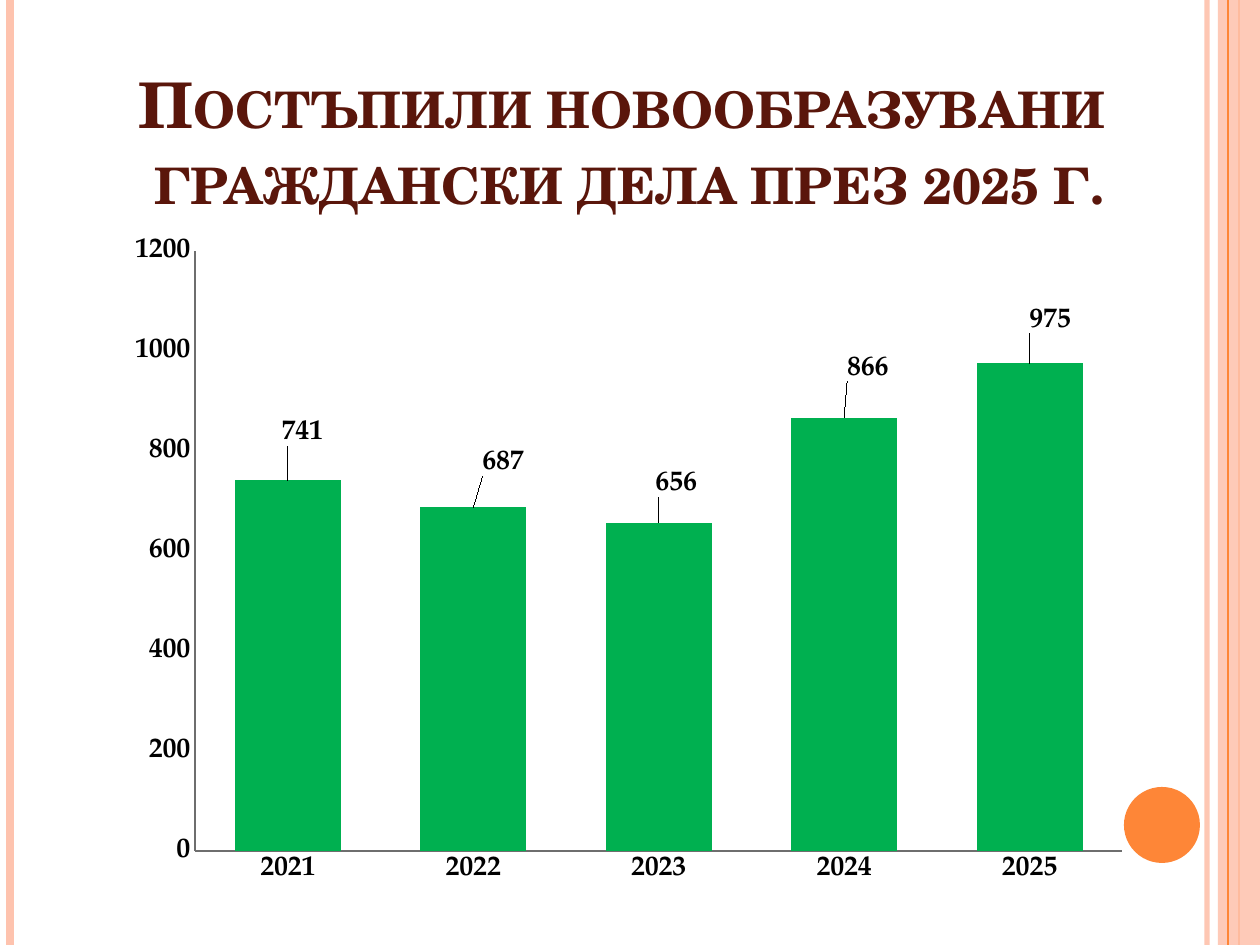
from lxml import etree
from pptx import Presentation
from pptx import util as u
from pptx.chart.data import CategoryChartData
from pptx.dml.color import RGBColor
from pptx.enum import chart as ch, shapes, text
from pptx.oxml import parse_xml
from pptx.oxml.ns import nsdecls, qn

PX = 914400 // 126
HEADING = "Постъпили новообразувани \vграждански дела през 2025 г."
# year, cases, label shift from its usual place (px)
CASES = [
    ("2021", 741, (14, -29)),
    ("2022", 687, (30, -26)),
    ("2023", 656, (17, -21)),
    ("2024", 866, (24, -31)),
    ("2025", 975, (21, -25)),
]
# x (px), colour, width (pt), opacity (%)
STRIPES = [
    (1207, "FEC3AE", 3, 93),
    (10, "FEC3AE", 4.5, 100),
    (1239, "FE8637", 1.5, 100),
    (1228, "FE8637", 0.75, 100),
]
BAND = (1218, 0, 42, 945)
DOT = (1124, 787, 76, 76)
TITLE_BOX = (84, 66, 1091, 157)
CHART_BOX = (115, 224, 1029, 672)
PLOT_BOX = (80, 27, 927, 600)  # inside the chart


def emu(*lengths):
    return [n * PX for n in lengths]


def rgb(hex_code):
    return RGBColor.from_string(hex_code)


def set_opacity(fill_parent, percent):
    colour = fill_parent.find(".//" + qn("a:srgbClr"))
    etree.SubElement(colour, qn("a:alpha")).set("val", str(percent * 1000))


def style_font(font, size, face, colour="000000"):
    font.size, font.name, font.bold = u.Pt(size), face, True
    font.color.rgb = rgb(colour)


def manual_layout(target="", **fractions):
    values = "".join(f'<c:{k} val="{v:.3f}"/>' for k, v in fractions.items())
    return parse_xml(f'<c:layout {nsdecls("c")}><c:manualLayout>{target}{values}'
                     "</c:manualLayout></c:layout>")


def add_stripe(slide, x, colour, width, opacity):
    stripe = slide.shapes.add_connector(
        shapes.MSO_CONNECTOR.STRAIGHT, *emu(x, 0, x, 945))
    stripe.line.color.rgb = rgb(colour)
    stripe.line.width = u.Pt(width)
    set_opacity(stripe.line._get_or_add_ln(), opacity)
    etree.SubElement(stripe._element.spPr, qn("a:effectLst"))


def add_plain(slide, kind, box, colour, opacity=100):
    shape = slide.shapes.add_shape(kind, *emu(*box))
    shape.shadow.inherit = False
    shape.fill.solid()
    shape.fill.fore_color.rgb = rgb(colour)
    shape.line.fill.background()
    set_opacity(shape._element.spPr, opacity)


def add_title(slide):
    title = slide.shapes.title
    title.left, title.top, title.width, title.height = emu(*TITLE_BOX)
    frame = title.text_frame
    frame.text = HEADING
    frame.word_wrap = True
    frame.auto_size = text.MSO_AUTO_SIZE.NONE
    frame.vertical_anchor = text.MSO_ANCHOR.BOTTOM
    paragraph = frame.paragraphs[0]
    paragraph.alignment = text.PP_ALIGN.CENTER
    style_font(paragraph.font, 36, "TeX Gyre Schola", "5A160B")
    for run in paragraph.runs:
        run.font._element.set("cap", "small")


def add_case_chart(slide):
    data = CategoryChartData()
    data.categories = [year for year, _, _ in CASES]
    data.add_series("Series 1", [count for _, count, _ in CASES])
    chart = slide.shapes.add_chart(
        ch.XL_CHART_TYPE.COLUMN_CLUSTERED, *emu(*CHART_BOX), data).chart
    chart.has_legend = chart.has_title = False
    chart.font.name, chart.font.size = "TeX Gyre Schola", u.Pt(10)
    chart_w, chart_h = CHART_BOX[2:]

    # Plot area
    area = chart._chartSpace.chart.plotArea
    for old in area.findall(qn("c:layout")):
        area.remove(old)
    x, y, w, h = PLOT_BOX
    area.insert(0, manual_layout(
        '<c:layoutTarget val="inner"/><c:xMode val="edge"/><c:yMode val="edge"/>',
        x=x / chart_w, y=y / chart_h, w=w / chart_w, h=h / chart_h))

    # Axes
    for axis in (chart.category_axis, chart.value_axis):
        axis.has_major_gridlines = False
        axis.major_tick_mark = axis.minor_tick_mark = ch.XL_TICK_MARK.NONE
        axis.format.line.color.rgb = rgb("6E6E6E")
        axis.format.line.width = u.Pt(1)
        style_font(axis.tick_labels.font, 16, "TeX Gyre Pagella")
    counts = chart.value_axis
    counts.minimum_scale, counts.maximum_scale, counts.major_unit = 0, 1200, 200

    # Columns and their shifted labels
    plot = chart.plots[0]
    plot.gap_width, plot.vary_by_categories = 75, False
    series = plot.series[0]
    series.format.fill.solid()
    series.format.fill.fore_color.rgb = rgb("00B050")
    for i in range(len(CASES)):
        label = series.points[i].data_label
        style_font(label.font, 16, "TeX Gyre Pagella")
        label.position = ch.XL_LABEL_POSITION.OUTSIDE_END
    for (_, _, (dx, dy)), label in zip(CASES, series._element.xpath(".//c:dLbl")):
        label.find(qn("c:idx")).addnext(
            manual_layout(x=dx / chart_w, y=dy / chart_h))


def main():
    prs = Presentation()
    prs.slide_width, prs.slide_height = emu(1260, 945)
    slide = prs.slides.add_slide(prs.slide_layouts[5])

    # Side decoration
    for stripe in STRIPES[:3]:
        add_stripe(slide, *stripe)
    add_plain(slide, shapes.MSO_SHAPE.RECTANGLE, BAND, "FEC3AE", 87)
    add_stripe(slide, *STRIPES[3])
    add_plain(slide, shapes.MSO_SHAPE.OVAL, DOT, "FE8637")

    add_title(slide)
    add_case_chart(slide)
    prs.save("out.pptx")


if __name__ == "__main__":
    main()
